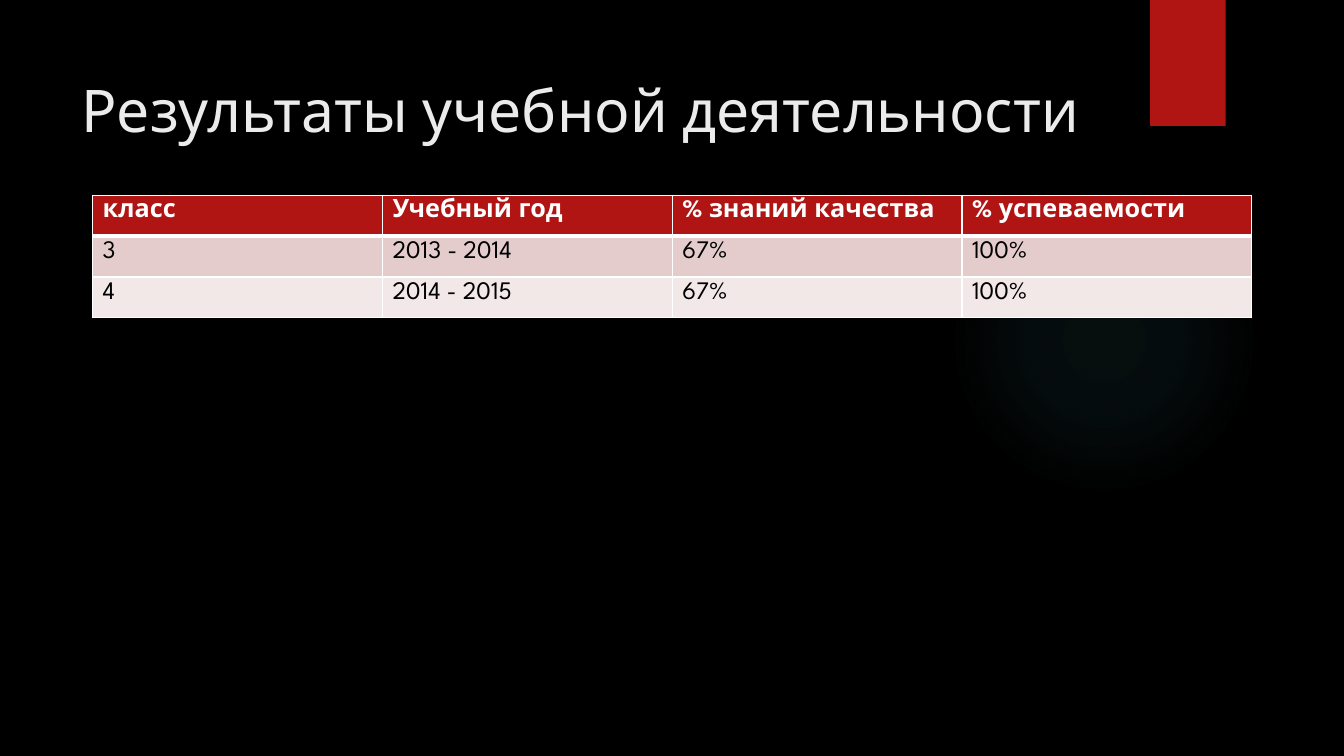
from lxml import etree
from pptx import Presentation
from pptx.dml.color import RGBColor
from pptx.enum.shapes import MSO_SHAPE
from pptx.enum.text import MSO_ANCHOR
from pptx.oxml import parse_xml
from pptx.oxml.ns import nsdecls, qn
from pptx.util import Pt

RECT, OVAL = MSO_SHAPE.RECTANGLE, MSO_SHAPE.OVAL
TOP = MSO_ANCHOR.TOP
FONT = "League Spartan"
COLORS = {
    "back": "000000", "accent": "B01513", "glow": "50B9C1", "title": "EBEBEB",
    "white": "FFFFFF", "black": "000000", "band1": "E4CCCC", "band2": "F2E8E7",
}
GLOW_STOPS = [(0, 7), (36, 6), (69, 0)]  # position and opacity, percent
RESULTS = [
    ["класс", "Учебный год", "% знаний качества", "% успеваемости"],
    ["3", "2013 - 2014", "67%", "100%"],
    ["4", "2014 - 2015", "67%", "100%"],
]
ROW_HEIGHTS = [29.2, 29.2, 24.5]
ROW_FILLS = ["accent", "band1", "band2"]


def rgb(name):
    return RGBColor.from_string(COLORS[name])


class SlideBuilder:
    def __init__(self, slide, font):
        self.s = slide
        self.font = font

    def background(self, color):
        fill = self.s.background.fill
        fill.solid()
        fill.fore_color.rgb = rgb(color)

    def shape(self, kind, box, color):
        sp = self.s.shapes.add_shape(kind, *map(Pt, box))
        sp.shadow.inherit = False
        sp.fill.solid()
        sp.fill.fore_color.rgb = rgb(color)
        sp.line.fill.background()
        return sp

    def glow(self, box, color, stops):
        """Draw a circle whose colour fades out from its centre."""
        sp = self.shape(OVAL, box, color)
        gs = "".join(
            f'<a:gs pos="{pos * 1000}"><a:srgbClr val="{COLORS[color]}">'
            f'<a:alpha val="{alpha * 1000}"/></a:srgbClr></a:gs>'
            for pos, alpha in stops)
        grad = parse_xml(
            f'<a:gradFill {nsdecls("a")}><a:gsLst>{gs}</a:gsLst><a:path path="circle">'
            '<a:fillToRect l="50000" t="50000" r="50000" b="50000"/></a:path></a:gradFill>')
        spPr = sp.element.spPr
        spPr.replace(spPr.find(qn("a:solidFill")), grad)

    def add_run(self, tf, text, color, **style):
        p = tf.paragraphs[0]
        r = p.add_run()
        r.text = text
        for key, value in {"name": self.font, **style}.items():
            setattr(r.font, key, value)
        r.font.color.rgb = rgb(color)

    def text(self, box, text, color, margin_top, **style):
        tf = self.s.shapes.add_textbox(*map(Pt, box)).text_frame
        for key, value in {"word_wrap": True, "vertical_anchor": TOP,
                           "margin_top": Pt(margin_top)}.items():
            setattr(tf, key, value)
        self.add_run(tf, text, color, **style)

    def borders(self, cell, color, widths):
        tcPr = cell._tc.get_or_add_tcPr()
        for i, (side, width) in enumerate(widths.items()):
            ln = etree.Element(qn(f"a:ln{side}"), w=str(Pt(width)))
            fill = etree.SubElement(ln, qn("a:solidFill"))
            etree.SubElement(fill, qn("a:srgbClr"), val=COLORS[color])
            tcPr.insert(i, ln)

    def table(self, box, rows, heights, fills, size):
        table = self.s.shapes.add_table(len(rows), len(rows[0]), *map(Pt, box)).table
        for i, values in enumerate(rows):
            table.rows[i].height = Pt(heights[i])
            header = i == 0
            widths = {"L": 1, "R": 1, "T": 3 if i == 1 else 1, "B": 3 if header else 1}
            for j, value in enumerate(values):
                cell = table.cell(i, j)
                cell.fill.solid()
                cell.fill.fore_color.rgb = rgb(fills[i])
                self.borders(cell, "white", widths)
                self.add_run(cell.text_frame, value, "white" if header else "black",
                             size=Pt(size), bold=header)


def main():
    prs = Presentation()
    prs.slide_width, prs.slide_height = Pt(960), Pt(540)
    b = SlideBuilder(prs.slides.add_slide(prs.slide_layouts[6]), FONT)
    b.background("back")
    b.glow((677.5, 131.8, 221.8, 221.8), "glow", GLOW_STOPS)
    b.shape(RECT, (821.5, 0, 54, 90), "accent")
    b.text((51, 36, 741, 110), "Результаты учебной деятельности", "title", 16.4, size=Pt(42))
    b.table((66.2, 139.5, 828, sum(ROW_HEIGHTS)), RESULTS, ROW_HEIGHTS, ROW_FILLS, 18)
    prs.save("out.pptx")


if __name__ == "__main__":
    main()
